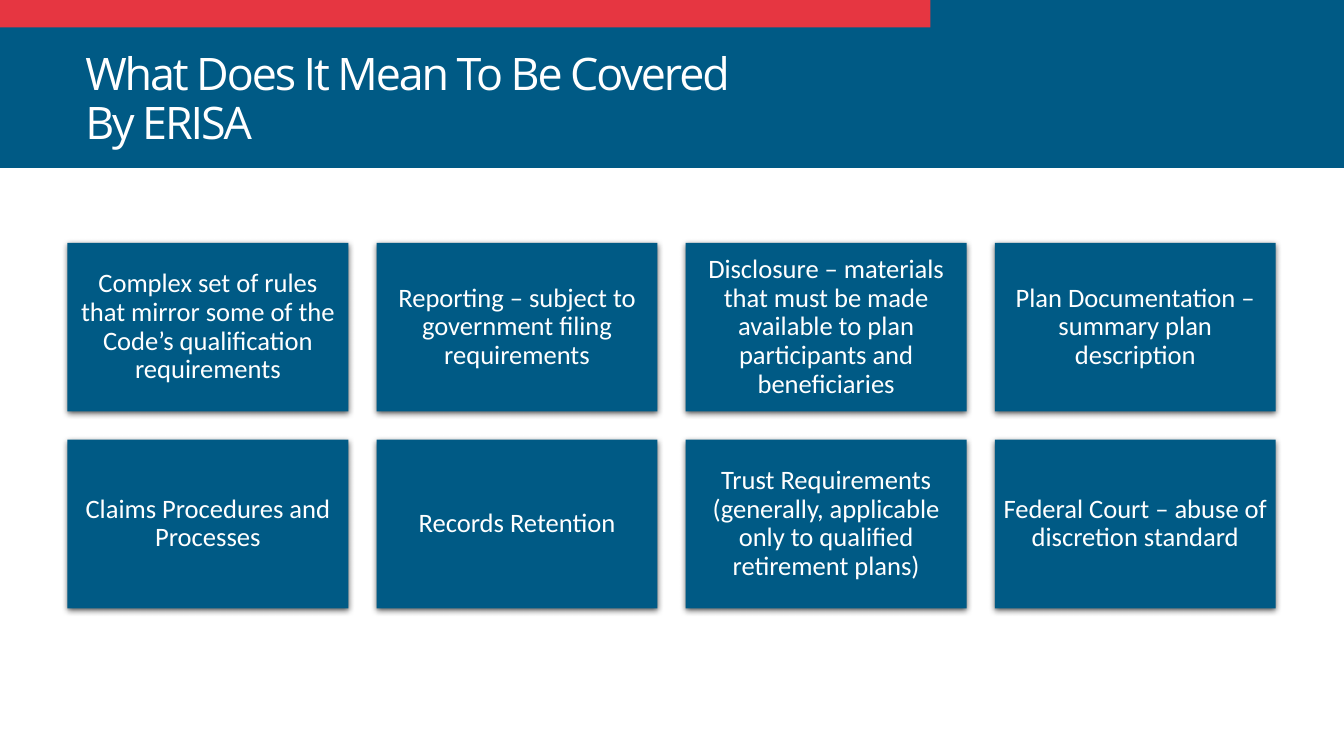
from lxml.etree import SubElement
from pptx import Presentation
from pptx.dml.color import RGBColor
from pptx.enum.shapes import MSO_SHAPE
from pptx.enum.text import MSO_ANCHOR, PP_ALIGN
from pptx.oxml.ns import qn
from pptx.util import Cm, Pt

BLUE = RGBColor(0x00, 0x5A, 0x85)
RED = RGBColor(0xE6, 0x36, 0x41)
WHITE = RGBColor(0xFF, 0xFF, 0xFF)

TOPICS = [
    "Complex set of rules that mirror some of the Code’s qualification requirements",
    "Reporting – subject to government filing requirements",
    "Disclosure – materials that must be made available to plan participants and beneficiaries",
    "Plan Documentation – summary plan description",
    "Claims Procedures and Processes",
    "Records Retention",
    "Trust Requirements (generally, applicable only to qualified retirement plans)",
    "Federal Court – abuse of discretion standard",
]

prs = Presentation()
prs.slide_width, prs.slide_height = Cm(33.87), Cm(19.05)
slide = prs.slides.add_slide(prs.slide_layouts[6])


def add_rect(left, top, width, height, fill):
    rect = slide.shapes.add_shape(
        MSO_SHAPE.RECTANGLE, Cm(left), Cm(top), Cm(width), Cm(height))
    rect.shadow.inherit = False
    rect.fill.solid()
    rect.fill.fore_color.rgb = fill
    rect.line.fill.background()
    return rect


def set_text(shape, text, align, font, inset):
    frame = shape.text_frame
    frame.text = text
    para = frame.paragraphs[0]
    box = {"word_wrap": True, "vertical_anchor": MSO_ANCHOR.MIDDLE}
    box.update({f"margin_{side}": Cm(inset)
                for side in ("left", "right", "top", "bottom")})
    lines = {"alignment": align, "line_spacing": 0.9}
    run = para.runs[0]
    for part, values in ((frame, box), (para, lines), (run.font, font)):
        for name, value in values.items():
            setattr(part, name, value)
    run.font.color.rgb = WHITE
    return run


# Header bands
add_rect(0, 0, 33.87, 4.23, BLUE)
add_rect(0, 0, 23.45, 0.69, RED)

# Title with tightened letter spacing
title = slide.shapes.add_textbox(Cm(1.9), Cm(0.69), Cm(17.98), Cm(3.68))
run = set_text(title, "What Does It Mean To Be Covered By ERISA", PP_ALIGN.LEFT,
               {"name": "Open Sans", "size": Pt(32)}, 0.25)
run.font._element.set("spc", "-150")

# Topic cards: four columns, two rows
COLS, WIDTH, HEIGHT, GAP = 4, 7.08, 4.25, 0.71
for i, topic in enumerate(TOPICS):
    row, col = divmod(i, COLS)
    card = add_rect(1.7 + col * (WIDTH + GAP), 6.12 + row * (HEIGHT + GAP),
                    WIDTH, HEIGHT, BLUE)
    set_text(card, topic, PP_ALIGN.CENTER,
             {"name": "Calibri", "size": Pt(19)}, 0.18)

    # Soft shadow below the card
    effects = card._element.spPr.find(qn("a:effectLst"))
    shade = SubElement(effects, qn("a:outerShdw"), blurRad=str(Pt(4.5)),
                       dist=str(Pt(1.5)), dir="5400000", algn="ctr", rotWithShape="0")
    color = SubElement(shade, qn("a:srgbClr"), val="000000")
    SubElement(color, qn("a:alpha"), val="63000")

prs.save("out.pptx")
